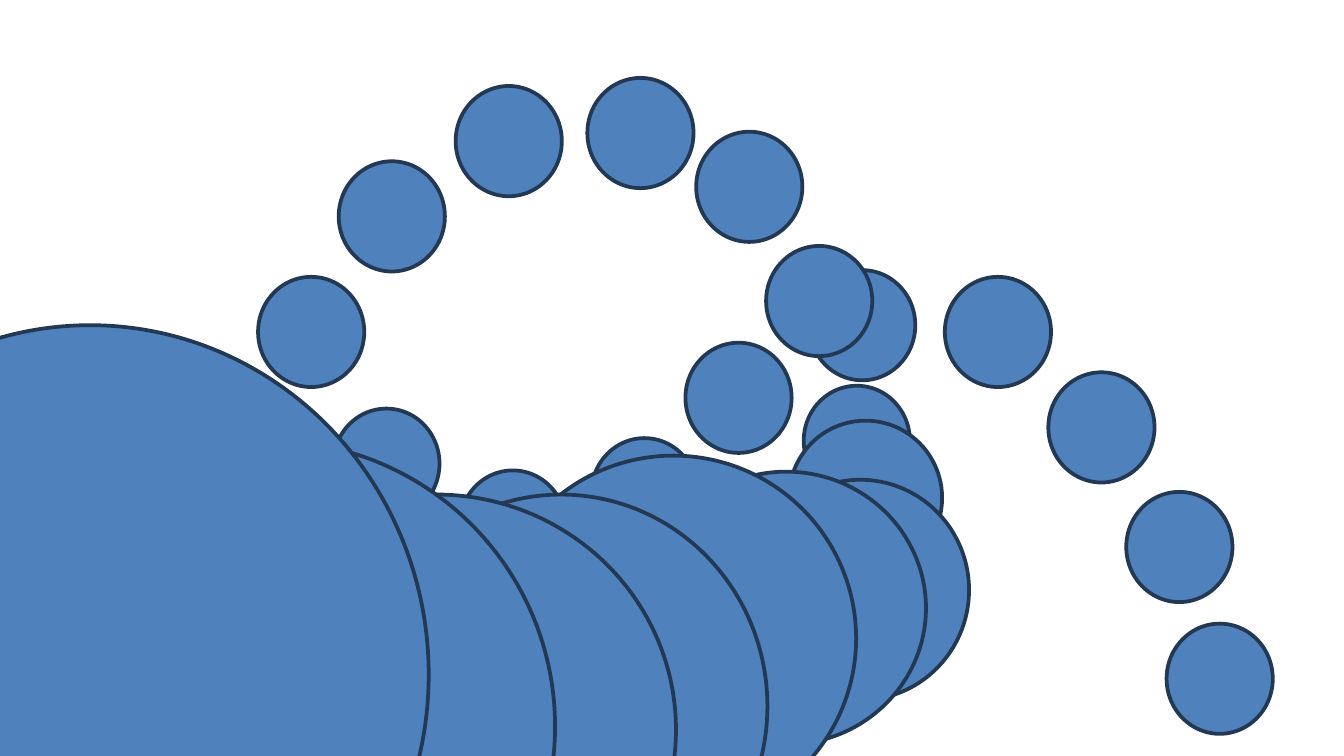
import pptx
import pptx.util
import pptx.dml.color
import pptx.enum.shapes

PX = 4572  # EMU per px, 200 px to the inch
COLOR = {"fill": "4F81BD", "line": "233953"}

deck = pptx.Presentation()
deck.slide_width = 2000 * PX
deck.slide_height = 1125 * PX
slide = deck.slides.add_slide(deck.slide_layouts[6])

# Trail of equal dots, from the tail inwards: left, top
DOT = (158, 164)
trail = [
    (1736, 928), (1676, 732), (1560, 554), (1406, 412),
    (1204, 402), (1020, 510), (880, 652), (684, 700),
    (496, 608), (384, 412), (504, 240), (678, 128),
    (874, 116), (1036, 196), (1140, 366), (1196, 574),
]

# Discs that grow towards the viewer: left, top, width, height
discs = [
    (1174, 626, 228, 230),
    (1118, 714, 324, 328),
    (962, 702, 416, 406),
    (730, 678, 544, 544),
    (528, 736, 614, 630),
    (292, 736, 714, 700),
    (-24, 656, 850, 850),
    (-370, 484, 1008, 1040),
]

for box in [spot + DOT for spot in trail] + discs:
    disc = slide.shapes.add_shape(
        pptx.enum.shapes.MSO_SHAPE.OVAL, *[n * PX for n in box])
    disc.shadow.inherit = False
    disc.fill.solid()
    disc.fill.fore_color.rgb = pptx.dml.color.RGBColor.from_string(COLOR["fill"])
    disc.line.color.rgb = pptx.dml.color.RGBColor.from_string(COLOR["line"])
    disc.line.width = pptx.util.Pt(2)

deck.save("out.pptx")
